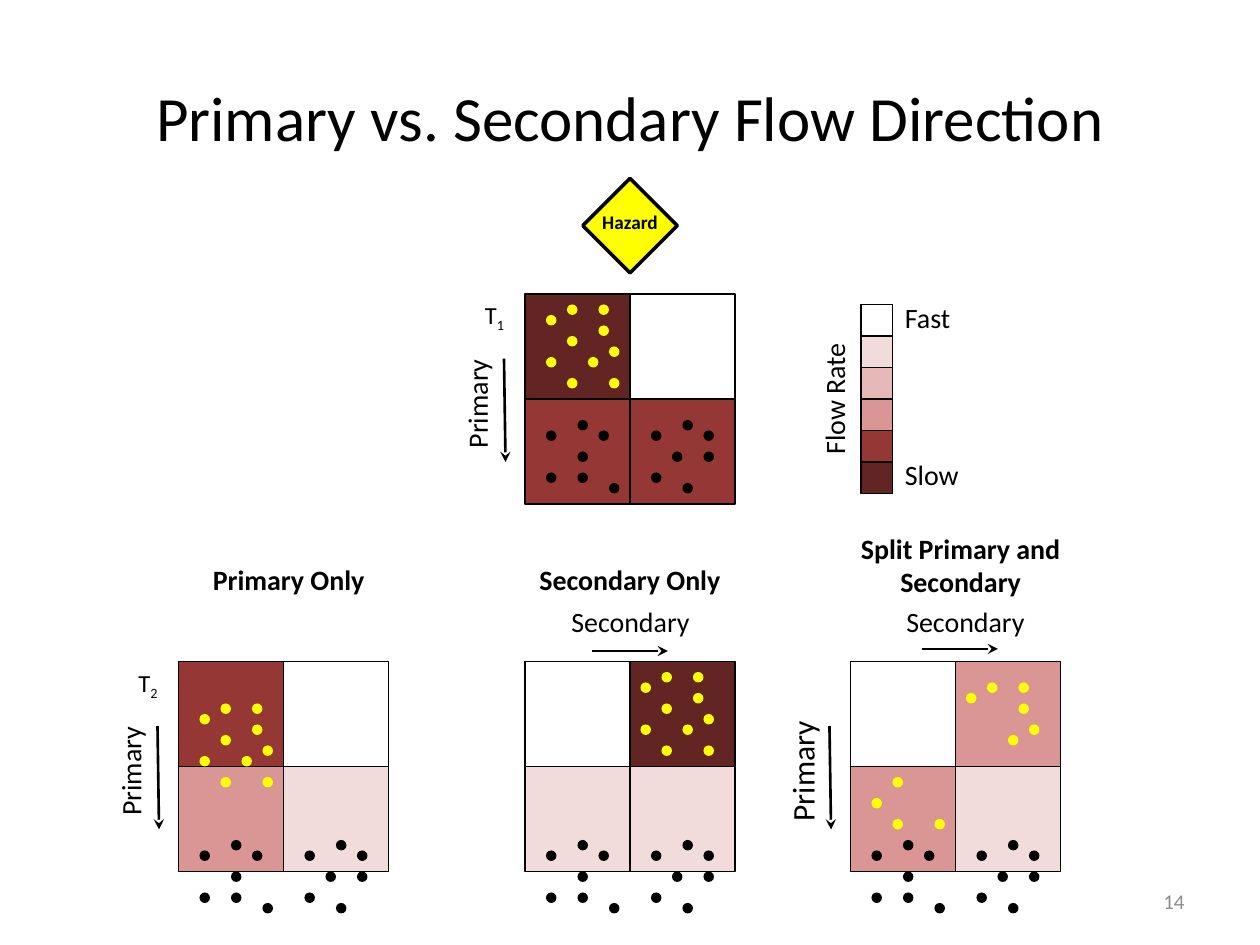
"""Builds a slide comparing primary and secondary flow directions on a 1/12 inch grid."""
from lxml import etree
from pptx import Presentation
from pptx import util as u
from pptx.dml.color import RGBColor
from pptx.enum import shapes, text
from pptx.oxml.ns import qn

UNIT = u.Inches(1) / 12
CELL, DOT, SWATCH = 10, 1, 3
FONT = "Calibri"
BLACK = RGBColor(0x00, 0x00, 0x00)
GREY = RGBColor(0x8C, 0x8C, 0x8C)
YELLOW = RGBColor(0xFF, 0xFF, 0x00)
FASTEST = RGBColor(0xFF, 0xFF, 0xFF)
FAST = RGBColor(0xF2, 0xDC, 0xDB)
MEDIUM = RGBColor(0xE6, 0xB9, 0xB8)
MODERATE = RGBColor(0xD9, 0x96, 0x94)
SLOW = RGBColor(0x95, 0x37, 0x35)
SLOWEST = RGBColor(0x63, 0x25, 0x23)
RATES = [FASTEST, FAST, MEDIUM, MODERATE, SLOW, SLOWEST]

EXPOSED = [(2, 2), (2, 6), (4, 4), (6, 6), (4, 8), (7, 3), (8, 8), (4, 1), (7, 1), (8, 5)]
DIVERTED_DOWN = {(2, 6), (4, 4), (4, 8), (8, 8)}
OTHERS = [(2, 13), (2, 17), (5, 12), (5, 15), (5, 17), (7, 13), (8, 18),
          (12, 13), (12, 17), (15, 12), (17, 15), (14, 15), (17, 13), (15, 18)]


def grid(*lengths):
    """Turn grid units into slide lengths."""
    return [u.Emu(round(length * UNIT)) for length in lengths]


def style(run, size, bold=False, color=BLACK):
    """Format one run."""
    run.font.name, run.font.size, run.font.bold = FONT, u.Pt(size), bold
    run.font.color.rgb = color


def put_shape(slide, kind, box, fill=None, line=None):
    """Place a preset shape with an optional fill and black outline."""
    shape = slide.shapes.add_shape(kind, *grid(*box))
    shape.shadow.inherit = False
    if fill is None:
        shape.fill.background()
    else:
        shape.fill.solid()
        shape.fill.fore_color.rgb = fill
    if line is None:
        shape.line.fill.background()
    else:
        shape.line.color.rgb, shape.line.width = BLACK, u.Pt(line)


def put_label(slide, words, box, size=16, bold=False, align=text.PP_ALIGN.CENTER,
              color=BLACK, rotation=0):
    """Place a wrapped text box and return its paragraph."""
    label = slide.shapes.add_textbox(*grid(*box))
    label.rotation = rotation
    frame = label.text_frame
    frame.word_wrap = True
    frame.text = words
    paragraph = frame.paragraphs[0]
    paragraph.alignment = align
    style(paragraph.runs[0], size, bold, color)
    return paragraph


def put_arrow(slide, *ends):
    """Draw a flow arrow from one grid point to another."""
    arrow = slide.shapes.add_connector(shapes.MSO_CONNECTOR.STRAIGHT, *grid(*ends))
    arrow.line.color.rgb, arrow.line.width = BLACK, u.Pt(1.5)
    etree.SubElement(arrow.line._get_or_add_ln(), qn("a:tailEnd"), type="stealth")
    etree.SubElement(arrow._element.spPr, qn("a:effectLst"))


def put_panel(slide, left, top, rates, exposed, others_drop=0):
    """Draw a two by two flow grid with its exposed and other occupants."""
    for index, rate in enumerate(rates):
        row, column = divmod(index, 2)
        put_shape(slide, shapes.MSO_SHAPE.RECTANGLE,
                  (left + column * CELL, top + row * CELL, CELL, CELL), rate, 1)
    others = [(x, y + others_drop) for x, y in OTHERS]
    for color, dots in ((YELLOW, exposed), (BLACK, others)):
        for x, y in dots:
            put_shape(slide, shapes.MSO_SHAPE.OVAL, (left + x, top + y, DOT, DOT), color)


def put_primary(slide, left, top, size=16):
    """Add the downward primary arrow and its upright label beside a panel."""
    put_arrow(slide, left - 2, top + 6.15, left - 1.85, top + 16)
    height = 4.4 if size == 16 else 4.8
    put_label(slide, "Primary", (left - 12.1, top + 10.46 - height / 2, 15, height),
              size, rotation=270)


def put_secondary(slide, left, top, label_shift, arrow_shift, rise):
    """Add the rightward secondary arrow and its label above a panel."""
    put_arrow(slide, left + arrow_shift, top - rise, left + arrow_shift + 7.2, top - rise)
    put_label(slide, "Secondary", (left + label_shift, top - 6, 16.1, 4.4))


def put_time(slide, left, top, step):
    """Add a time label with a subscript step beside a panel."""
    paragraph = put_label(slide, "T", (left - 5, top, 6, 4.1), 14, align=text.PP_ALIGN.LEFT)
    subscript = paragraph.add_run()
    subscript.text = step
    style(subscript, 14)
    subscript._r.get_or_add_rPr().set("baseline", "-25000")


def put_heading(slide, words, left, top, width, height=4.4):
    """Add a bold case heading."""
    put_label(slide, words, (left, top, width, height), bold=True)


def put_hazard(slide, left, top, side):
    """Draw the hazard sign."""
    put_shape(slide, shapes.MSO_SHAPE.DIAMOND, (left, top, side, side), YELLOW, 2)
    put_label(slide, "Hazard", (left - 0.5, top + 2.4, side + 1, 3.5), 11, True)


def put_legend(slide, left, top):
    """Draw the flow rate scale with its end labels."""
    for row, rate in enumerate(RATES):
        put_shape(slide, shapes.MSO_SHAPE.RECTANGLE,
                  (left, top + row * SWATCH, SWATCH, SWATCH), rate, 1)
    put_label(slide, "Flow Rate", (left - 11.56, top + 6.8, 18, 4.4), rotation=270)
    for words, row in (("Fast", 0), ("Slow", len(RATES) - 1)):
        put_label(slide, words, (left + SWATCH, top + row * SWATCH - 1, 15, 4.4),
                  align=text.PP_ALIGN.LEFT)


def put_title(slide, words):
    """Fill the title placeholder."""
    title = slide.shapes.title
    title.left, title.top, title.width, title.height = grid(6, 3.6, 108, 15)
    title.text_frame.text = words
    title.text_frame.vertical_anchor = text.MSO_ANCHOR.MIDDLE
    title.text_frame.paragraphs[0].alignment = text.PP_ALIGN.CENTER
    style(title.text_frame.paragraphs[0].runs[0], 36)


def put_start(slide, left, top):
    """Draw the state at the first time step."""
    put_panel(slide, left, top, [SLOWEST, None, SLOW, SLOW], EXPOSED)
    put_primary(slide, left, top)
    put_time(slide, left, top, "1")


def put_primary_case(slide, left, top):
    """Draw the outcome of moving in the primary direction only."""
    put_panel(slide, left, top, [SLOW, None, MODERATE, FAST],
              [(x, y + 3) for x, y in EXPOSED], 5)
    put_primary(slide, left, top)
    put_time(slide, left, top, "2")
    put_heading(slide, "Primary Only", left + 1, top - 10, 19)


def put_secondary_case(slide, left, top):
    """Draw the outcome of moving in the secondary direction only."""
    put_panel(slide, left, top, [None, SLOWEST, FAST, FAST],
              [(x + 9, y) for x, y in EXPOSED], 5)
    put_secondary(slide, left, top, 2, 6.4, 1)
    put_heading(slide, "Secondary Only", left - 1.75, top - 10, 23.5)


def put_split_case(slide, left, top):
    """Draw the outcome of splitting between both directions."""
    split = [(x, y + 7) if (x, y) in DIVERTED_DOWN else (x + 9, y + 1) for x, y in EXPOSED]
    put_panel(slide, left, top, [None, MODERATE, MODERATE, FAST], split, 5)
    put_primary(slide, left, top, 18)
    put_secondary(slide, left, top, 2.9, 6.84, 1.2)
    put_heading(slide, "Split Primary and Secondary", left - 1, top - 13, 23, 7.7)


def main():
    """Build and save the slide."""
    deck = Presentation()
    deck.slide_width, deck.slide_height = u.Inches(10), u.Inches(7.5)
    slide = deck.slides.add_slide(deck.slide_layouts[5])
    put_title(slide, "Primary vs. Secondary Flow Direction")
    put_start(slide, 50, 28)
    put_primary_case(slide, 17, 63)
    put_secondary_case(slide, 50, 63)
    put_split_case(slide, 81, 63)
    put_legend(slide, 82, 29)
    put_hazard(slide, 55.5, 17, 9)
    number = put_label(slide, "14", (86, 83.4, 28, 4.8), 12,
                       align=text.PP_ALIGN.RIGHT, color=GREY)
    number.line_spacing = 1.0
    slide.shapes[-1].text_frame.vertical_anchor = text.MSO_ANCHOR.MIDDLE
    deck.save("out.pptx")


if __name__ == "__main__":
    main()
